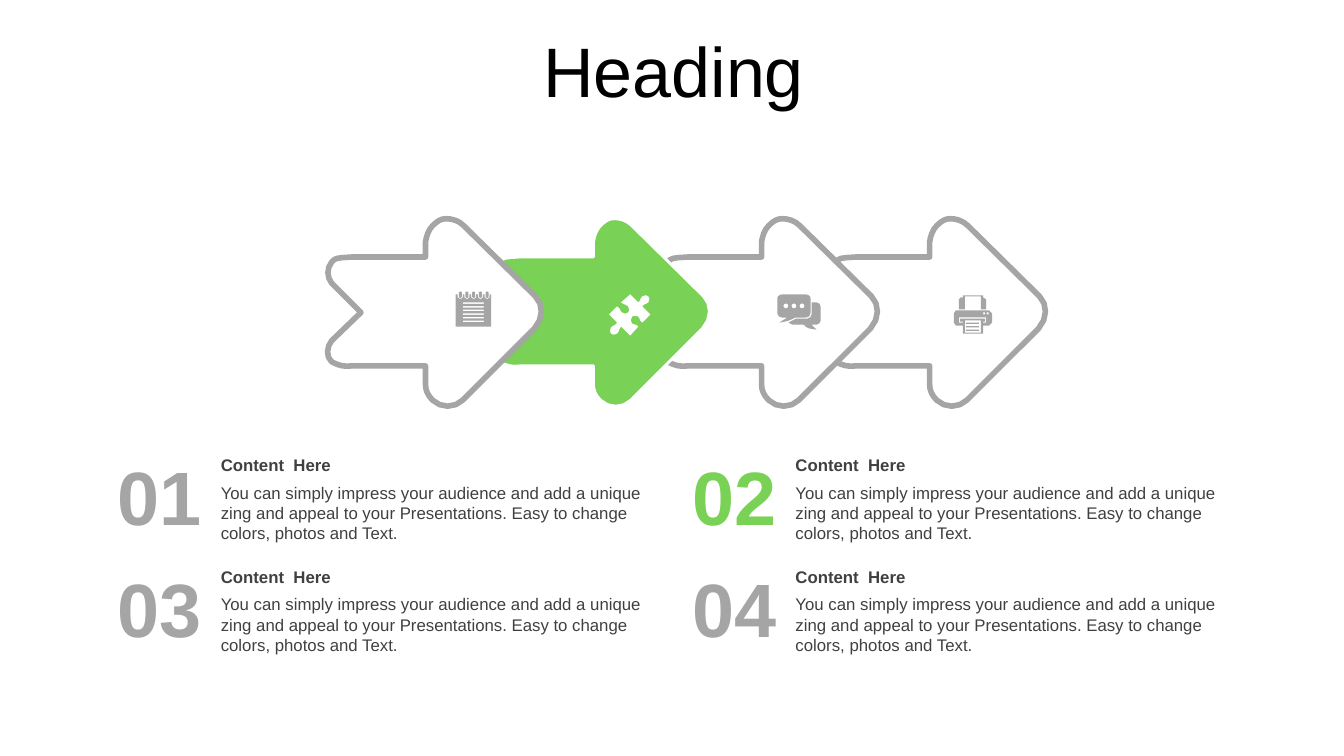
from math import ceil, dist

from pptx import Presentation
from pptx.dml.color import RGBColor
from pptx.enum.text import MSO_ANCHOR, MSO_AUTO_SIZE, PP_ALIGN
from pptx.util import Inches, Pt

WIDE, HIGH = 13.33, 7.5
FONT = "Arial"
HUES = {"grey": "A5A5A5", "green": "79D155", "white": "FFFFFF", "dark": "404040", "black": "000000"}
HEAD = "Content  Here"
BODY = ("You can simply impress your audience and add a unique zing and appeal to your "
        "Presentations. Easy to change colors, photos and Text.")
COUNT = {"M": 2, "L": 2, "C": 6}

ARROW = """M 119 0 C 126 0 132 2 137 7 L 208 77 C 216 85 216 99 207 109 L 136 180
C 128 188 114 188 106 180 C 101 175 99 170 99 164 L 99 146 L 26 146
C 19 147 13 146 6 142 C 0 137 1 127 6 121 L 35 93 L 6 64 C 1 58 1 49 6 43
C 10 39 9 39 26 38 L 99 38 L 99 23 C 100 17 102 11 106 7 C 110 3 114 0 119 0"""
PUZZLE = """M 39 2 C 40 3 41 6 39 8 C 37 10 35 9 33 12 L 41 20 L 33 28 C 30 26 31 24 29 22
C 27 21 24 21 23 22 C 22 24 21 27 23 29 C 26 31 27 29 29 32 L 21 41 L 12 32
C 9 35 11 36 8 39 C 6 41 3 40 2 39 C 1 37 0 35 2 33 C 4 30 6 32 8 28 L 0 20 L 8 12
C 12 14 10 16 13 18 C 15 20 17 19 19 18 C 20 17 21 14 19 12 C 16 9 15 11 12 8 L 21 0
L 29 8 C 32 6 30 5 33 2 C 35 0 38 1 39 2"""
CHAT = """M 34 8 L 39 8 C 41 8 43 10 43 12 L 43 26 C 43 28 41 30 39 30 L 34 30
L 39 35 C 31 34 30 34 26 30 L 15 30 L 11 28 L 19 24
L 30 24 C 32 24 34 22 34 20 M 5 0 L 28 0 C 31 0 33 2 33 4 L 33 18
C 33 21 31 23 28 23 L 18 23 C 12 26 10 27 2 28 L 10 23 L 5 23
C 2 23 0 21 0 18 L 0 4 C 0 2 2 0 5 0 """
PRINTER = """M 11 25 L 11 37 L 27 37 L 27 25 M 5 22 L 5 27 L 9 27 L 9 26 L 6 26 L 6 23
L 31 23 L 31 26 L 29 26 L 29 27 L 32 27 L 32 22 M 2 15 L 35 15 L 38 18
L 38 27 L 35 30 L 29 30 L 29 38 L 9 38 L 9 30 L 2 30 L 0 27
L 0 18 L 2 15 M 9 0 L 29 0 L 29 2 L 32 4 L 32 14 L 27 14
L 27 1 L 11 1 L 11 14 L 5 14 L 5 4 L 7 2 L 9 2 """


def bar(x, y, w, h):
    return f"M {x} {y} L {x + w} {y} L {x + w} {y + h} L {x} {y + h} "


def dot(x, y, r):
    k = r * 0.55
    return (f"M {x} {y - r} C {x + k} {y - r} {x + r} {y - k} {x + r} {y} "
            f"C {x + r} {y + k} {x + k} {y + r} {x} {y + r} "
            f"C {x - k} {y + r} {x - r} {y + k} {x - r} {y} "
            f"C {x - r} {y - k} {x - k} {y - r} {x} {y - r} ")


def note():
    page, rings = "M 0 3 ", ""
    for i in range(5):
        x = 2 + 6.65 * i
        page += f"L {x} 3 L {x} 6 L {x + 2.5} 8 L {x + 5} 6 L {x + 5} 3 "
        rings += (f"M {x + 2.5} 0 L {x + 4} 1 L {x + 4} 5.5 L {x + 2.5} 7 "
                  f"L {x + 1} 5.5 L {x + 1} 1 ")
    rows = "".join(bar(7, 11 + 3.6 * i, 21, 1.5) for i in range(6))
    return page + "L 35 3 L 35 35 L 0 35 " + rings + rows


def trace(route):
    loops, words = [], iter(route.split())
    for word in words:
        nums = [float(next(words)) for _ in range(COUNT[word])]
        spots = list(zip(nums[::2], nums[1::2]))
        if word == "M":
            loops.append(spots)
        elif word == "L":
            loops[-1] += spots
        else:
            ends = [loops[-1][-1]] + spots
            steps = min(4, ceil(dist(ends[0], ends[3]) / 3))
            for step in range(1, steps + 1):
                t = step / steps
                mix = ((1 - t) ** 3, 3 * t * (1 - t) ** 2, 3 * t * t * (1 - t), t ** 3)
                loops[-1].append(tuple(sum(m * p[a] for m, p in zip(mix, ends)) for a in (0, 1)))
    return loops


def draw(slide, route, left, top, fill, edge=None, width=0):
    loops = [[(Inches(left + x / 100), Inches(top + y / 100)) for x, y in loop]
             for loop in trace(route)]
    pen = slide.shapes.build_freeform(*loops[0][0])
    for n, loop in enumerate(loops):
        if n:
            pen.move_to(*loop[0])
        pen.add_line_segments(loop[1:], close=True)
    shape = pen.convert_to_shape()
    shape.shadow.inherit = False
    shape.fill.solid()
    shape.fill.fore_color.rgb = RGBColor.from_string(HUES[fill])
    if edge:
        shape.line.color.rgb = RGBColor.from_string(HUES[edge])
        shape.line.width = Pt(width)
    else:
        shape.line.fill.background()


def place(shape, box):
    shape.left, shape.top, shape.width, shape.height = map(Inches, box)


def write(frame, text, size, hue, bold=False, align=PP_ALIGN.LEFT,
          anchor=MSO_ANCHOR.MIDDLE, pads=(0, 0.05, 0.1, 0.05), fit=MSO_AUTO_SIZE.SHAPE_TO_FIT_TEXT):
    frame.word_wrap, frame.auto_size, frame.vertical_anchor = True, fit, anchor
    (frame.margin_left, frame.margin_top,
     frame.margin_right, frame.margin_bottom) = map(Inches, pads)
    para = frame.paragraphs[0]
    para.alignment = align
    run = para.add_run()
    run.text = text
    font = run.font
    font.name, font.size, font.bold = FONT, Pt(size), bold
    font.color.rgb = RGBColor.from_string(HUES[hue])
    return para


def label(shapes, box, *args, **opts):
    write(shapes.add_textbox(*map(Inches, box)).text_frame, *args, **opts)


def title(slide, box):
    head = slide.shapes.title
    place(head, box)
    para = write(head.text_frame, "Heading", 50, "black", align=PP_ALIGN.CENTER,
                 pads=(0.1, 0.1, 0.1, 0.05), fit=MSO_AUTO_SIZE.NONE)
    para.line_spacing, para.space_before = 0.7, Pt(10)


def chain(slide, left, top, pitch):
    for i in reversed(range(4)):
        look = ("green", "white", 2) if i == 1 else ("white", "grey", 4)
        draw(slide, ARROW, left + i * pitch, top, *look)


def icons(slide, left, top):
    dots = "".join(dot(8.5 + 8 * i, 11.5, 2.5) for i in range(3))
    lights = "".join(bar(x, 17, 2, 2) for x in (29, 32.5))
    rows = "".join(bar(12, 27 + 3.5 * i, 13, 1.2) for i in range(3))
    draw(slide, note(), left + 1.29, top + 0.72, "grey")
    draw(slide, PRINTER + lights + rows, left + 6.23, top + 0.76, "grey")
    draw(slide, PUZZLE, left + 2.81, top + 0.75, "white")
    draw(slide, CHAT + dots, left + 4.48, top + 0.75, "grey")


def item(slide, box, number, hue):
    left, top, wide, high = box
    text = left + wide * 0.2025
    span = wide * 0.7975
    shapes = slide.shapes.add_group_shape().shapes
    label(shapes, (text, top, span, 0.3), HEAD, 12, "dark", bold=True)
    label(shapes, (text, top + 0.275, span, 0.71), BODY, 12, "dark", anchor=MSO_ANCHOR.TOP)
    label(slide.shapes, (left, top, wide * 0.168, high), number, 54, hue, bold=True,
          align=PP_ALIGN.RIGHT, pads=(0, 0, 0, 0))


def items(slide, left, top, across, down):
    for i in range(4):
        row, col = divmod(i, 2)
        box = (left + col * across, top + row * down, 5.58, 0.91)
        item(slide, box, f"{i + 1:02}", "green" if i == 1 else "grey")


def main():
    deck = Presentation()
    deck.slide_width, deck.slide_height = Inches(WIDE), Inches(HIGH)
    slide = deck.slides.add_slide(deck.slide_layouts[5])
    title(slide, (0.35, 0.37, WIDE * 0.95, 0.79))
    chain(slide, 3.23, 2.17, 5 / 3)
    items(slide, 1.06, 4.46, 5.7, 1.11)
    icons(slide, 3.23, 2.17)
    deck.save("out.pptx")


if __name__ == "__main__":
    main()
